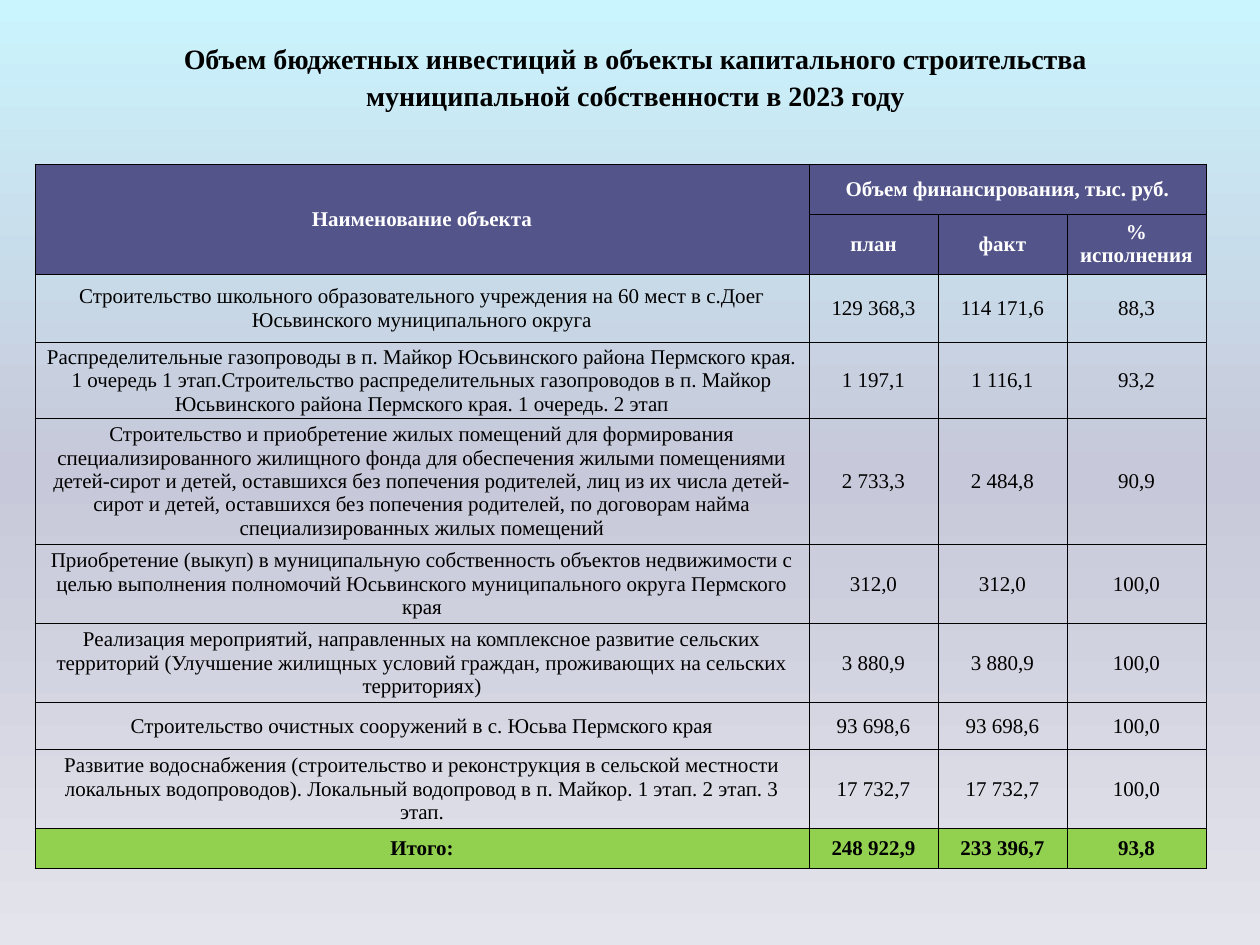
from typing import NamedTuple, Optional

from copy import deepcopy
from lxml import etree
from pptx import Presentation
from pptx.dml.color import RGBColor
from pptx.enum.text import MSO_ANCHOR, PP_ALIGN
from pptx.oxml.ns import qn
from pptx.util import Emu, Pt

MIDDLE = MSO_ANCHOR.MIDDLE
CENTER = PP_ALIGN.CENTER

PX_PER_INCH = 126
FONT = "Times New Roman"
BLACK = RGBColor(0x00, 0x00, 0x00)
WHITE = RGBColor(0xFF, 0xFF, 0xFF)
INDIGO = RGBColor(0x53, 0x54, 0x8A)
GREEN = RGBColor(0x92, 0xD0, 0x50)
SKY = RGBColor(0xCA, 0xF4, 0xFE)
LAVENDER = RGBColor(0xC7, 0xC8, 0xD9)
PALE = RGBColor(0xE4, 0xE4, 0xEC)


class RowStyle(NamedTuple):
    color: RGBColor
    bold: bool
    fill: Optional[RGBColor]


class TableRow(NamedTuple):
    height: int
    style: RowStyle
    texts: tuple[str, str, str, str]


HEADER = RowStyle(WHITE, True, INDIGO)
BODY = RowStyle(BLACK, False, None)
TOTAL = RowStyle(BLACK, True, GREEN)

TITLE = ("Объем бюджетных инвестиций в объекты капитального строительства "
         "муниципальной собственности в 2023 году")
COLUMN_WIDTHS = (774, 129, 129, 139)
ROWS = (
    TableRow(50, HEADER, ("Наименование объекта", "Объем финансирования, тыс. руб.", "", "")),
    TableRow(60, HEADER, ("", "план", "факт", "% исполнения")),
    TableRow(69, BODY, (
        "Строительство школьного образовательного учреждения на 60 мест в с.Доег "
        "Юсьвинского муниципального округа",
        "129 368,3", "114 171,6", "88,3")),
    TableRow(70, BODY, (
        "Распределительные газопроводы в п. Майкор Юсьвинского района Пермского края. "
        "1 очередь 1 этап.Строительство распределительных газопроводов в п. Майкор "
        "Юсьвинского района Пермского края. 1 очередь. 2 этап",
        "1 197,1", "1 116,1", "93,2")),
    TableRow(117, BODY, (
        "Строительство и приобретение жилых помещений для формирования "
        "специализированного жилищного фонда для обеспечения жилыми помещениями "
        "детей-сирот и детей, оставшихся без попечения родителей, лиц из их числа "
        "детей-сирот и детей, оставшихся без попечения родителей, по договорам найма "
        "специализированных жилых помещений",
        "2 733,3", "2 484,8", "90,9")),
    TableRow(79, BODY, (
        "Приобретение (выкуп) в муниципальную собственность объектов недвижимости с "
        "целью выполнения полномочий Юсьвинского муниципального округа Пермского края",
        "312,0", "312,0", "100,0")),
    TableRow(79, BODY, (
        "Реализация мероприятий, направленных на комплексное развитие сельских "
        "территорий (Улучшение жилищных условий граждан, проживающих на сельских "
        "территориях)",
        "3 880,9", "3 880,9", "100,0")),
    TableRow(47, BODY, (
        "Строительство очистных сооружений в с. Юсьва Пермского края",
        "93 698,6", "93 698,6", "100,0")),
    TableRow(79, BODY, (
        "Развитие водоснабжения (строительство и реконструкция в сельской местности "
        "локальных водопроводов). Локальный водопровод в п. Майкор. 1 этап. 2 этап. "
        "3 этап.",
        "17 732,7", "17 732,7", "100,0")),
    TableRow(40, TOTAL, ("Итого:", "248 922,9", "233 396,7", "93,8")),
)


def px(length: int) -> Emu:
    return Emu(round(length * 914400 / PX_PER_INCH))


def format_paragraph(para, size: int, color: RGBColor, bold: bool) -> None:
    para.alignment = CENTER
    para.font.name = FONT
    para.font.size = Pt(size)
    para.font.bold = bold
    para.font.color.rgb = color


def paint_background(page) -> None:
    fill = page.background.fill
    fill.gradient()
    fill.gradient_angle = 270
    stop_list = next(page.background._cSld.iter(qn("a:gsLst")))
    stop_list.append(deepcopy(stop_list[-1]))
    for stop, color, position in zip(fill.gradient_stops, (SKY, LAVENDER, PALE), (0, 0.5, 1)):
        stop.color.rgb = color
        stop.position = position


def add_title(page) -> None:
    box = page.shapes.add_textbox(px(74), px(16), px(1123), px(118))
    frame = box.text_frame
    frame.word_wrap = True
    frame.vertical_anchor = MIDDLE
    para = frame.paragraphs[0]
    para.text = TITLE
    para.line_spacing = 1.1
    format_paragraph(para, 16, BLACK, True)


def draw_borders(cell) -> None:
    properties = cell._tc.get_or_add_tcPr()
    for index, side in enumerate(("a:lnL", "a:lnR", "a:lnT", "a:lnB")):
        line = etree.Element(qn(side), w=str(Pt(0.5)))
        solid = etree.SubElement(line, qn("a:solidFill"))
        etree.SubElement(solid, qn("a:srgbClr"), val=str(BLACK))
        properties.insert(index, line)


def fill_cell(cell, text: str, style: RowStyle) -> None:
    cell.vertical_anchor = MIDDLE
    cell.margin_left = cell.margin_right = px(9)
    cell.margin_top = cell.margin_bottom = 0
    if style.fill is None:
        cell.fill.background()
    else:
        cell.fill.solid()
        cell.fill.fore_color.rgb = style.fill
    para = cell.text_frame.paragraphs[0]
    para.text = text
    format_paragraph(para, 12, style.color, style.bold)
    draw_borders(cell)


def add_investment_table(page) -> None:
    height = sum(row.height for row in ROWS)
    table = page.shapes.add_table(len(ROWS), len(COLUMN_WIDTHS), px(35), px(164),
                                  px(sum(COLUMN_WIDTHS)), px(height)).table
    table.first_row = False
    table.horz_banding = False
    for column, width in zip(table.columns, COLUMN_WIDTHS):
        column.width = px(width)
    for row_index, row in enumerate(ROWS):
        table.rows[row_index].height = px(row.height)
        for column_index, text in enumerate(row.texts):
            fill_cell(table.cell(row_index, column_index), text, row.style)
    table.cell(0, 0).merge(table.cell(1, 0))
    table.cell(0, 1).merge(table.cell(0, 3))


def main() -> None:
    deck = Presentation()
    deck.slide_width, deck.slide_height = px(1260), px(945)
    page = deck.slides.add_slide(deck.slide_layouts[6])
    paint_background(page)
    add_title(page)
    add_investment_table(page)
    deck.save("out.pptx")


if __name__ == "__main__":
    main()
